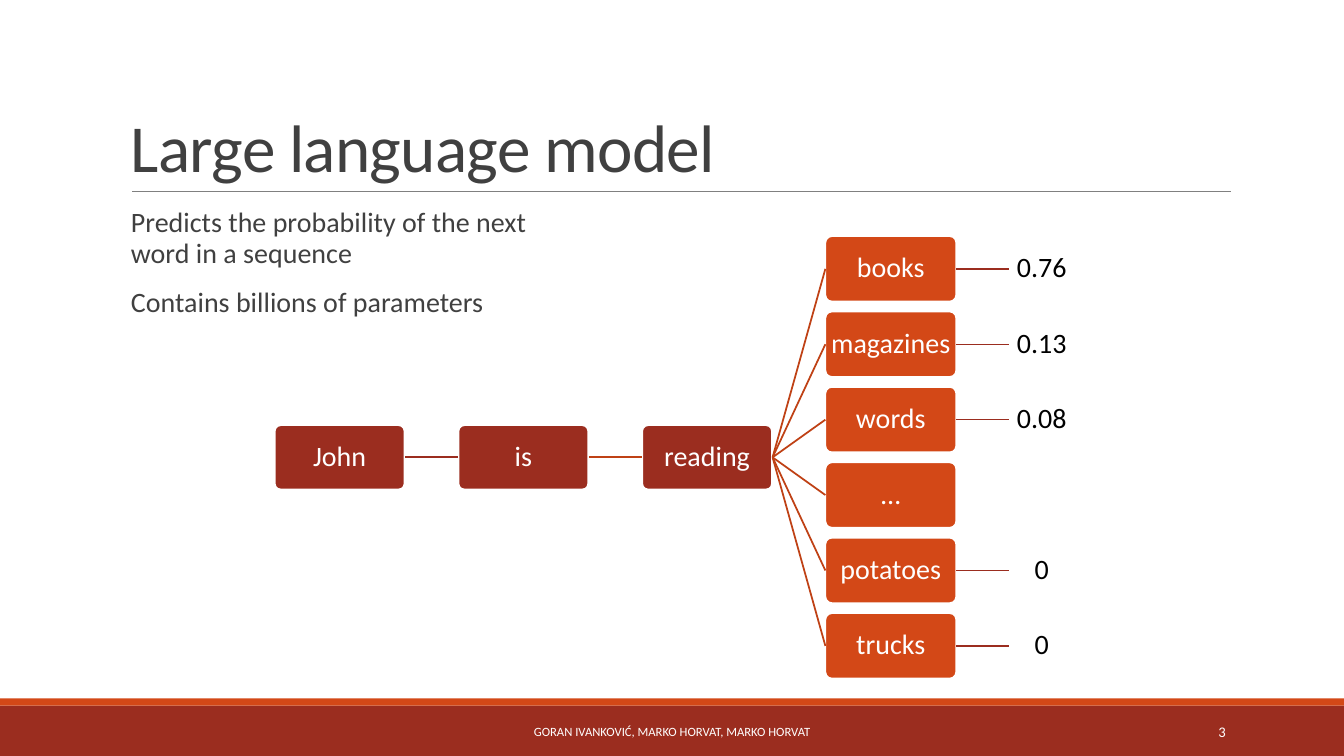
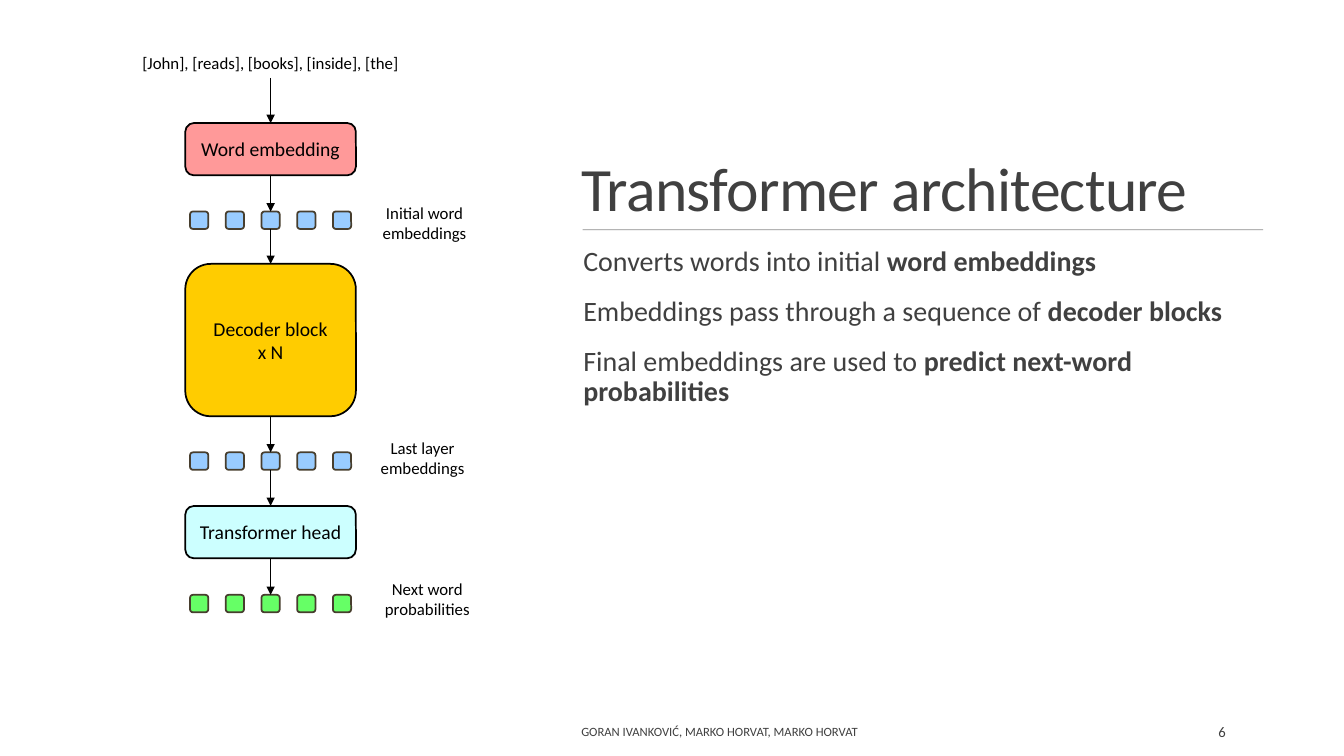
from lxml import etree
from pptx import Presentation
from pptx.dml.color import RGBColor
from pptx.enum.shapes import MSO_CONNECTOR, MSO_SHAPE
from pptx.enum.text import MSO_ANCHOR, PP_ALIGN
from pptx.oxml.ns import qn
from pptx.util import Cm, Pt

STRAIGHT = MSO_CONNECTOR.STRAIGHT
RECTANGLE, ROUNDED = MSO_SHAPE.RECTANGLE, MSO_SHAPE.ROUNDED_RECTANGLE
TOP, MIDDLE, BOTTOM = MSO_ANCHOR.TOP, MSO_ANCHOR.MIDDLE, MSO_ANCHOR.BOTTOM
LEFT, CENTER, RIGHT = PP_ALIGN.LEFT, PP_ALIGN.CENTER, PP_ALIGN.RIGHT
SIDE_TOP, SIDE_LEFT, SIDE_BOTTOM, SIDE_RIGHT = range(4)

FONT = "Calibri"
WHITE = RGBColor(0xFF, 0xFF, 0xFF)
BLACK = RGBColor(0x00, 0x00, 0x00)
INK = RGBColor(0x40, 0x40, 0x40)
GRAY = RGBColor(0x80, 0x80, 0x80)
BRICK = RGBColor(0x9B, 0x2D, 0x1F)
ORANGE = RGBColor(0xD3, 0x48, 0x17)
RUST = RGBColor(0xBF, 0x41, 0x15)
PINK = RGBColor(0xFF, 0x99, 0x99)
GOLD = RGBColor(0xFF, 0xCC, 0x00)
CYAN = RGBColor(0xCC, 0xFF, 0xFF)
BLUE = RGBColor(0x99, 0xCC, 0xFF)
GREEN = RGBColor(0x66, 0xFF, 0x66)
UMBER = RGBColor(0x47, 0x3E, 0x2E)

AUTHORS = "GORAN IVANKOVIĆ, MARKO HORVAT, MARKO HORVAT"


def add_box(page, place, lines=(), size=20, color=BLACK, align=CENTER, anchor=MIDDLE,
            margins=(0, 0), spacing=1, preset=None, fill=None, outline=None, width=1.25):
    place = [Cm(length) for length in place]
    if preset is None:
        box = page.shapes.add_textbox(*place)
    else:
        box = page.shapes.add_shape(preset, *place)
        box.shadow.inherit = False
        box.fill.solid()
        box.fill.fore_color.rgb = fill
        if outline is None:
            box.line.fill.background()
        else:
            box.line.color.rgb = outline
            box.line.width = Pt(width)
    frame = box.text_frame
    frame.word_wrap = True
    frame.vertical_anchor = anchor
    frame.margin_left = frame.margin_right = Cm(margins[0])
    frame.margin_top = frame.margin_bottom = Cm(margins[1])
    for index, line in enumerate(lines):
        para = frame.add_paragraph() if index else frame.paragraphs[0]
        para.alignment = align
        para.line_spacing = spacing
        para.font.name = FONT
        para.font.size = Pt(size)
        para.font.color.rgb = color
        plain, *strong = [line] if isinstance(line, str) else line
        para.add_run().text = plain
        for text in strong:
            span = para.add_run()
            span.text = text
            span.font.bold = True
    return box


def add_line(page, color, width, ends=(0, 0, 0, 0), joined=None, arrow=False):
    line = page.shapes.add_connector(STRAIGHT, *[Cm(length) for length in ends])
    line.line.color.rgb = color
    line.line.width = Pt(width)
    if joined:
        start, start_side, finish, finish_side = joined
        line.begin_connect(start, start_side)
        line.end_connect(finish, finish_side)
    properties = line._element.spPr
    if arrow:
        etree.SubElement(properties.find(qn("a:ln")), qn("a:tailEnd"), type="triangle")
    etree.SubElement(properties, qn("a:effectLst"))
    return line


deck = Presentation()
deck.slide_width, deck.slide_height = Cm(33.87), Cm(19.05)

TITLE_HEIGHT = 4.04
frames = [
    ("Large language model", 48, (3.05, 0.79, 27.94), (3.33, 31.01),
     (3.05, 5.13, 11.61, 11.18),
     ["Predicts the probability of the next word in a sequence",
      "Contains billions of parameters"],
     (10.24, 13.39), CENTER, WHITE, "3"),
    ("Transformer architecture", 44, (14.4, 1.75, 17.68), (14.68, 31.83),
     (14.45, 6.1, 17.68, 10.19),
     [("Converts words into initial ", "word embeddings"),
      ("Embeddings pass through a sequence of ", "decoder blocks"),
      ("Final embeddings are used to ", "predict next-word probabilities")],
     (14.4, 10.39), LEFT, INK, "6"),
]
pages = []
rules = []
for (title, title_size, (left, top, width), (rule_start, rule_end), body_place, body,
     (footer_left, footer_width), footer_align, footer_color, number) in frames:
    page = deck.slides.add_slide(deck.slide_layouts[6])
    pages.append(page)
    if footer_color == WHITE:
        add_box(page, (0, 17.78, 33.87, 1.27), preset=RECTANGLE, fill=BRICK)
        add_box(page, (0, 17.6, 33.87, 0.18), preset=RECTANGLE, fill=ORANGE)
    heading = add_box(page, (left, top, width, TITLE_HEIGHT), [title], title_size, INK, LEFT,
                      BOTTOM, (0.25, 0.13), 0.85)
    heading.text_frame.paragraphs[0].runs[0]._r.get_or_add_rPr().set("spc", "-50")
    rule_top = top + TITLE_HEIGHT
    rules.append(add_line(page, GRAY, 0.5, (rule_start, rule_top, rule_end, rule_top)))
    content = add_box(page, body_place, body, 20, INK, LEFT, TOP, (0.25, 0.13), 0.9)
    content.text_frame.margin_right = 0
    for para in content.text_frame.paragraphs:
        para.space_before = Pt(12)
        para.space_after = Pt(2)
    add_box(page, (footer_left, 17.93, footer_width, 1.02), [AUTHORS], 9, footer_color,
            footer_align, margins=(0.25, 0.13))
    add_box(page, (27.51, 17.93, 3.63, 1.02), [number], 10.5, footer_color, RIGHT,
            margins=(0.25, 0.13))

model_page, transformer_page = pages
rule_color = rules[1]._element.spPr.find(".//" + qn("a:srgbClr"))
etree.SubElement(rule_color, qn("a:alpha"), val="90000")

NODE_WIDTH, NODE_HEIGHT = 3.3, 1.65
TREE_LEFT, TREE_TOP = 6.91, 5.95
COLUMN_STEP, ROW_STEP = 4.63, 1.9
candidates = [("books", "0.76"), ("magazines", "0.13"), ("words", "0.08"),
              ("…", None), ("potatoes", "0"), ("trucks", "0")]
prompt_top = TREE_TOP + ROW_STEP * (len(candidates) - 1) / 2
chain = []
for column, word in enumerate(["John", "is", "reading"]):
    node = add_box(model_page,
                   (TREE_LEFT + column * COLUMN_STEP, prompt_top, NODE_WIDTH, NODE_HEIGHT),
                   [word], color=WHITE, spacing=0.9, preset=ROUNDED, fill=BRICK,
                   outline=WHITE, width=2)
    node.adjustments[0] = 0.1
    if chain:
        add_line(model_page, BRICK if column == 1 else RUST, 1.25,
                 joined=(chain[-1], SIDE_RIGHT, node, SIDE_LEFT))
    chain.append(node)

word_left = TREE_LEFT + 3 * COLUMN_STEP
for row, (word, probability) in enumerate(candidates):
    row_top = TREE_TOP + row * ROW_STEP
    node = add_box(model_page, (word_left, row_top, NODE_WIDTH, NODE_HEIGHT), [word],
                   color=WHITE, spacing=0.9, preset=ROUNDED, fill=ORANGE, outline=WHITE)
    node.adjustments[0] = 0.1
    add_line(model_page, RUST, 1.25, joined=(chain[-1], SIDE_RIGHT, node, SIDE_LEFT))
    if probability:
        score = add_box(model_page, (word_left + COLUMN_STEP, row_top, 1.65, NODE_HEIGHT),
                        [probability], spacing=0.9)
        add_line(model_page, BRICK, 1, joined=(node, SIDE_RIGHT, score, SIDE_LEFT))

AXIS = 6.82
BLOCK_WIDTH = 4.3
TOKEN_WIDTH, TOKEN_HEIGHT, TOKEN_STEP = 0.46, 0.44, 0.9
stages = [
    (3.1, 1.32, PINK, ["Word embedding"],
     5.33, BLUE, (9.35, 4.98), ["Initial word", "embeddings"]),
    (6.65, 3.84, GOLD, ["Decoder block", "x N"],
     11.4, BLUE, (9.3, 10.9), ["Last layer", "embeddings"]),
    (12.75, 1.32, CYAN, ["Transformer head"],
     14.99, GREEN, (9.42, 14.45), ["Next word", "probabilities"]),
]
previous = add_box(transformer_page, (AXIS - 3.52, 1.19, 7.04, 0.77),
                   ["[John], [reads], [books], [inside], [the]"], 12)
for top, height, fill, name, token_top, token_fill, label_corner, label in stages:
    block = add_box(transformer_page, (AXIS - BLOCK_WIDTH / 2, top, BLOCK_WIDTH, height), name,
                    14, margins=(0.25, 0.13), preset=ROUNDED, fill=fill, outline=BLACK)
    tokens = [add_box(transformer_page,
                      (AXIS - TOKEN_WIDTH / 2 + offset * TOKEN_STEP, token_top,
                       TOKEN_WIDTH, TOKEN_HEIGHT),
                      preset=ROUNDED, fill=token_fill, outline=UMBER)
              for offset in range(-2, 3)]
    add_box(transformer_page, (*label_corner, 2.7, 1.27), label, 12)
    for start, finish in [(previous, block), (block, tokens[2])]:
        add_line(transformer_page, BLACK, 1, joined=(start, SIDE_BOTTOM, finish, SIDE_TOP),
                 arrow=True)
    previous = tokens[2]

deck.save("out.pptx")
